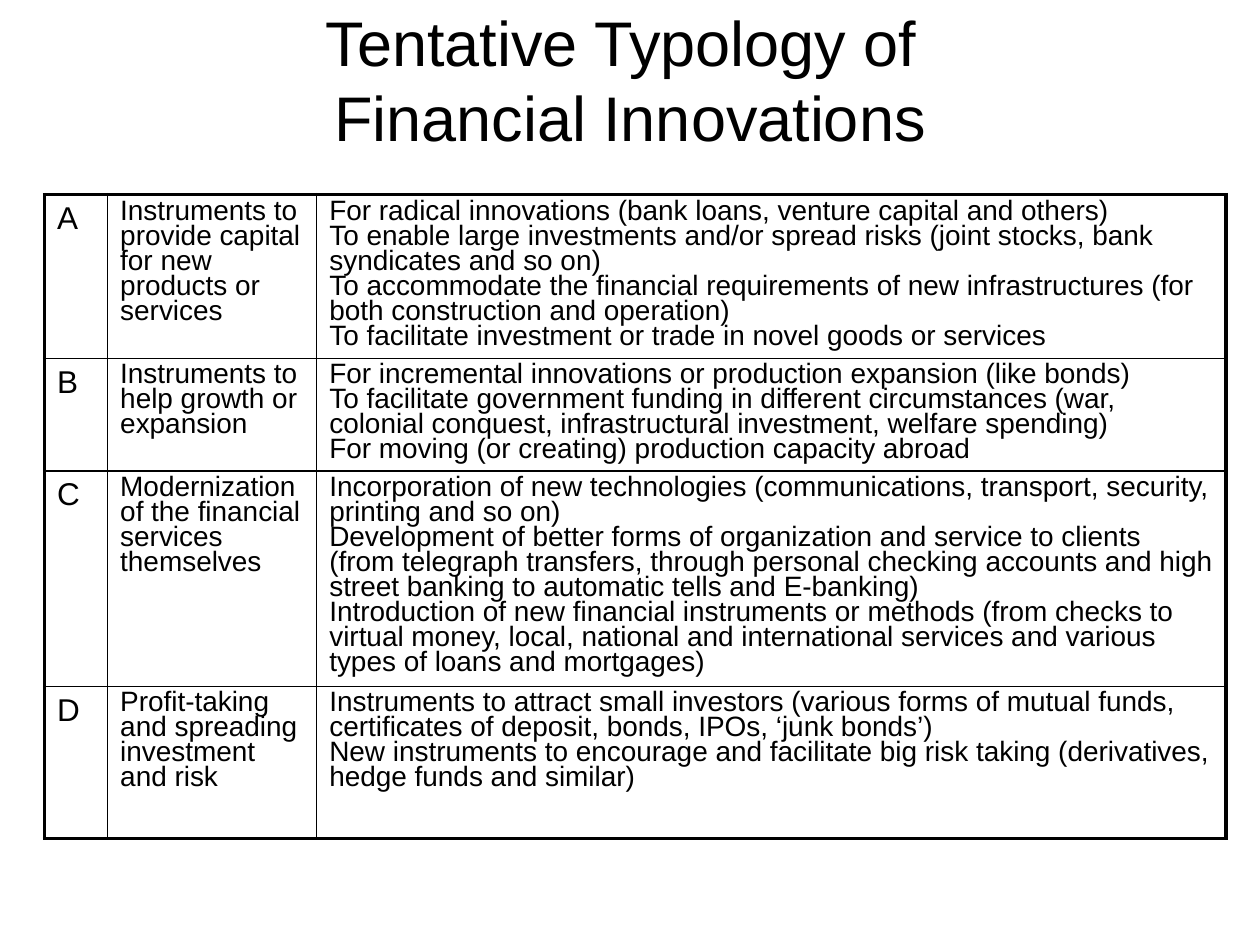
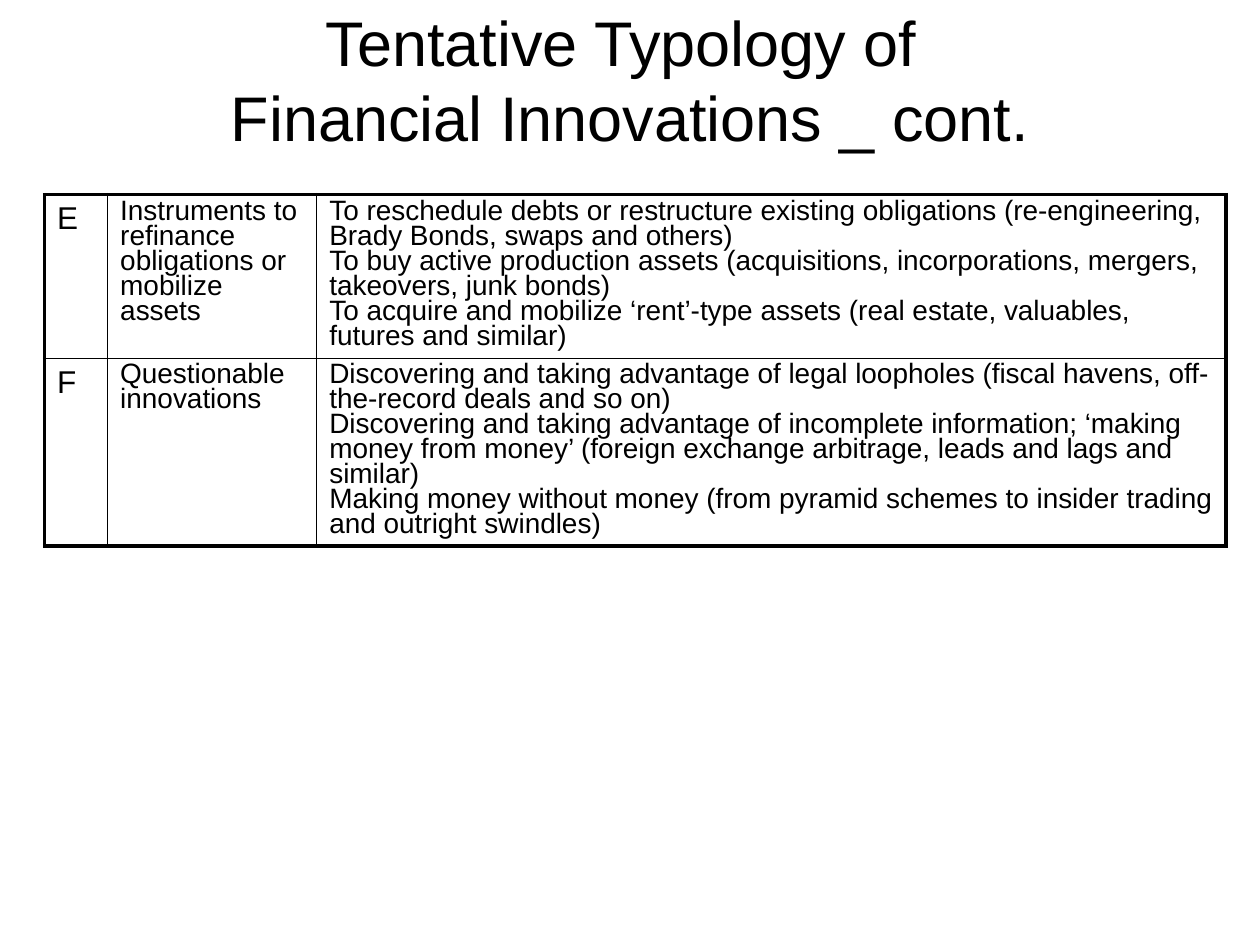
import dataclasses

import lxml.etree
import pptx
import pptx.dml.color
import pptx.enum.text
import pptx.oxml.ns
import pptx.util

Pt = pptx.util.Pt
COLORS = {"text": "000000", "rule": "000000"}
FONT = "Arial"
COLS = (36, 119.5, 519.6)
LEFT, TOP = 25.5, 111.2
THICK, THIN = 2.25, 1
LEADING = Pt(14.28)


@dataclasses.dataclass
class Entry:
    letter: str
    name: str
    items: list[str]
    height: float


@dataclasses.dataclass
class Page:
    title: str
    rows: list[Entry]


PAGES = [
    Page("Tentative Typology of \vFinancial Innovations", [
        Entry("A", "Instruments to provide capital for new products or services", [
            "For radical innovations (bank loans, venture capital and others)",
            "To enable large investments and/or spread risks (joint stocks, bank "
            "syndicates and so on)",
            "To accommodate the financial requirements of new infrastructures (for "
            "both construction and operation)",
            "To facilitate investment or trade in novel goods or services",
        ], 93.6),
        Entry("B", "Instruments to help growth or expansion", [
            "For incremental innovations or production expansion (like bonds)",
            "To facilitate government funding in different circumstances (war, "
            "colonial conquest, infrastructural investment, welfare spending)",
            "For moving (or creating) production capacity abroad",
        ], 64),
        Entry("C", "Modernization of the financial services themselves", [
            "Incorporation of new technologies (communications, transport, security, "
            "printing and so on)",
            "Development of better forms of organization and service to clients "
            "(from telegraph transfers, through personal checking accounts and high "
            "street banking to automatic tells and E-banking)",
            "Introduction of new financial instruments or methods (from checks to "
            "virtual money, local, national and international services and various "
            "types of loans and mortgages)",
        ], 123),
        Entry("D", "Profit-taking and spreading investment and risk", [
            "Instruments to attract small investors (various forms of mutual funds, "
            "certificates of deposit, bonds, IPOs, ‘junk bonds’)",
            "New instruments to encourage and facilitate big risk taking (derivatives, "
            "hedge funds and similar)",
        ], 87),
    ]),
    Page("Tentative Typology of \vFinancial Innovations _ cont.", [
        Entry("E", "Instruments to refinance obligations or mobilize assets", [
            "To reschedule debts or restructure existing obligations (re-engineering, "
            "Brady Bonds, swaps and others)",
            "To buy active production assets (acquisitions, incorporations, mergers, "
            "takeovers, junk bonds)",
            "To acquire and mobilize ‘rent’-type assets (real estate, valuables, "
            "futures and similar)",
        ], 93.6),
        Entry("F", "Questionable innovations", [
            "Discovering and taking advantage of legal loopholes (fiscal havens, "
            "off-the-record deals and so on)",
            "Discovering and taking advantage of incomplete information; ‘making "
            "money from money’ (foreign exchange arbitrage, leads and lags and similar)",
            "Making money without money (from pyramid schemes to insider trading "
            "and outright swindles)",
        ], 107),
    ]),
]


def write(frame, text: str, *, size: float, align=None, spacing: float = 1.0) -> None:
    """Fill a text frame, one paragraph for each line of text."""
    frame.text = text
    for para in frame.paragraphs:
        para.alignment = align
        para.line_spacing = spacing
        for run in para.runs:
            run.font.name = FONT
            run.font.size = Pt(size)
            run.font.color.rgb = pptx.dml.color.RGBColor.from_string(COLORS["text"])


def add_title(slide, text: str) -> None:
    frame = slide.shapes.add_textbox(Pt(54), Pt(12), Pt(612), Pt(66.2)).text_frame
    frame.word_wrap = True
    frame.vertical_anchor = pptx.enum.text.MSO_ANCHOR.MIDDLE
    write(frame, text, size=36, align=pptx.enum.text.PP_ALIGN.CENTER)


def rule(cell, widths: dict[str, float]) -> None:
    """Draw the cell's borders; widths must be in the order L, R, T, B."""
    qn = pptx.oxml.ns.qn
    props = cell._tc.get_or_add_tcPr()
    for side, width in widths.items():
        line = lxml.etree.SubElement(props, qn(f"a:ln{side}"), w=str(Pt(width)))
        fill = lxml.etree.SubElement(line, qn("a:solidFill"))
        lxml.etree.SubElement(fill, qn("a:srgbClr"), val=COLORS["rule"])


def add_grid(slide, rows: list[Entry]) -> None:
    height = sum(entry.height for entry in rows)
    table = slide.shapes.add_table(
        len(rows), len(COLS), Pt(LEFT), Pt(TOP), Pt(sum(COLS)), Pt(height)).table
    table.first_row = table.horz_banding = False
    for column, width in zip(table.columns, COLS):
        column.width = Pt(width)
    for r, entry in enumerate(rows):
        table.rows[r].height = Pt(entry.height)
        for c, text in enumerate((entry.letter, entry.name, "\n".join(entry.items))):
            cell = table.cell(r, c)
            write(cell.text_frame, text, size=16 if c else 18,
                  spacing=LEADING if c else 1.0)
            edges = {"L": c == 0, "R": c == len(COLS) - 1,
                     "T": r == 0, "B": r == len(rows) - 1}
            rule(cell, {side: THICK if outer else THIN for side, outer in edges.items()})
            cell.fill.background()


def main() -> None:
    deck = pptx.Presentation()
    deck.slide_width, deck.slide_height = Pt(720), Pt(540)
    for page in PAGES:
        slide = deck.slides.add_slide(deck.slide_layouts[6])
        add_title(slide, page.title)
        add_grid(slide, page.rows)
    deck.save("out.pptx")


if __name__ == "__main__":
    main()
